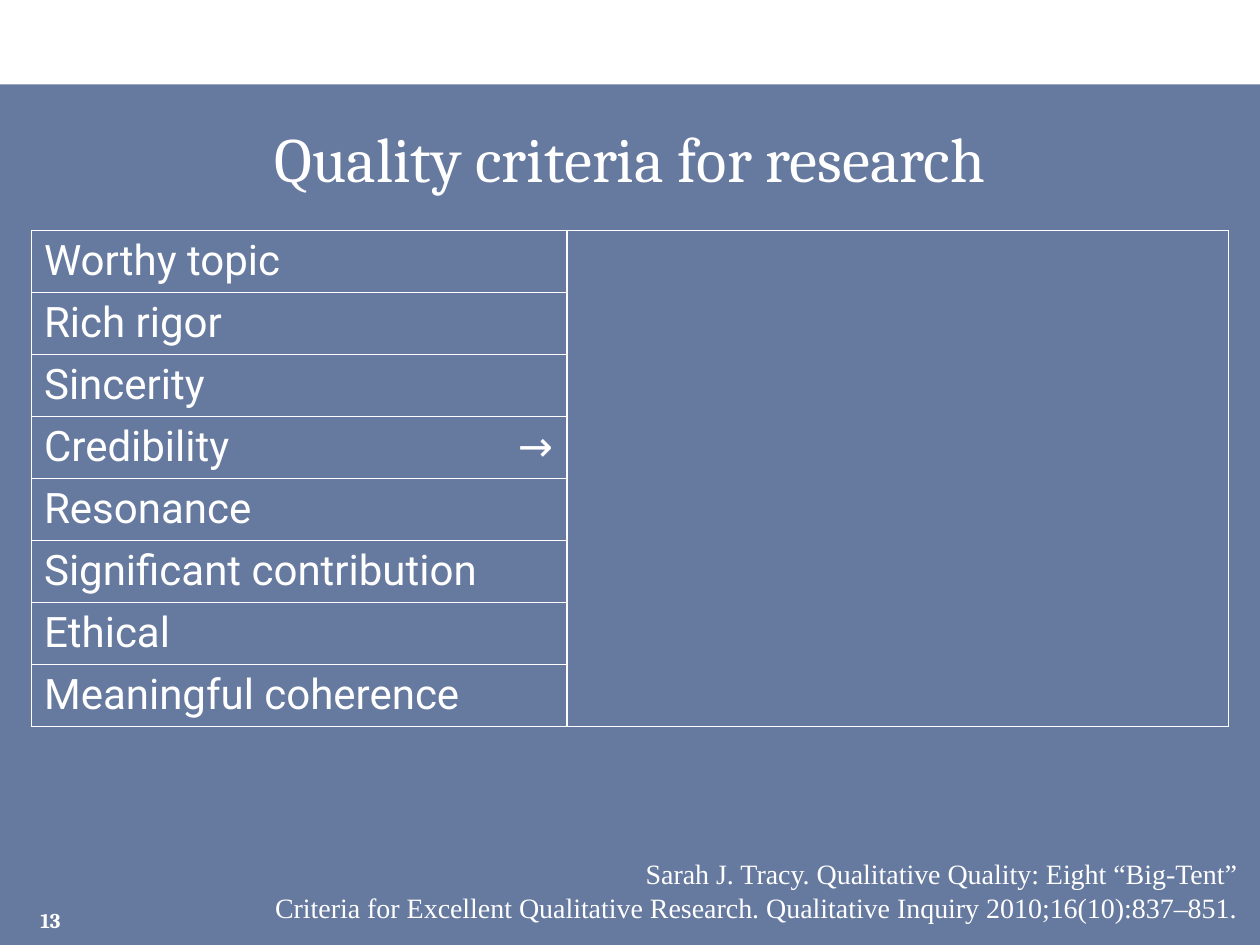
from lxml import etree
from pptx import Presentation
from pptx import util as u
from pptx.dml.color import RGBColor
from pptx.enum import shapes, text
from pptx.oxml import ns

WHITE = RGBColor(0xFF, 0xFF, 0xFF)
NAVY = RGBColor(0x00, 0x20, 0x60)
SERIF, SANS, TIMES = "Cambria", "Roboto", "Times New Roman"
LEFT, MID, RIGHT = text.PP_ALIGN.LEFT, text.PP_ALIGN.CENTER, text.PP_ALIGN.RIGHT

WIDE, HIGH = 10, 7.5
EDGE = WIDE / 40
BAND = 0.67
COLS = [3.75, 0.5, 5.25]
ROW = 0.49

TITLE = "Quality criteria for research"
ITEMS = [
    ("Worthy topic", ""),
    ("Rich rigor", ""),
    ("Sincerity", ""),
    ("Credibility", "→"),
    ("Resonance", ""),
    ("Significant contribution", ""),
    ("Ethical", ""),
    ("Meaningful coherence", ""),
]
CITE = [
    "Sarah J. Tracy. Qualitative Quality: Eight “Big-Tent”",
    "Criteria for Excellent Qualitative Research. Qualitative Inquiry 2010;16(10):837–851.",
]
PAGE = ["13"]


def write(frame, lines, face, size, align, bold=False):
    """Fill a text frame with one paragraph per line."""
    for i, line in enumerate(lines):
        para = frame.paragraphs[0] if i == 0 else frame.add_paragraph()
        para.alignment = align
        run = para.add_run()
        run.text = line
        font = run.font
        font.name, font.size, font.bold = face, u.Pt(size), bold
        font.color.rgb = WHITE


def note(slide, box, lines, face, size, anchor, bold=False):
    """Add a wrapped, right-aligned text box."""
    frame = slide.shapes.add_textbox(*map(u.Inches, box)).text_frame
    frame.word_wrap = True
    frame.vertical_anchor = anchor
    write(frame, lines, face, size, RIGHT, bold)


def rule(cell, sides):
    """Draw white borders on the given sides and clear the others."""
    props = cell._tc.get_or_add_tcPr()
    for side in "LRTB":
        line = etree.SubElement(props, ns.qn("a:ln" + side), w=str(u.Pt(1)))
        if side in sides:
            fill = etree.SubElement(line, ns.qn("a:solidFill"))
            etree.SubElement(fill, ns.qn("a:srgbClr"), val=str(WHITE))
        else:
            etree.SubElement(line, ns.qn("a:noFill"))
    cell.fill.background()


def panel(slide):
    """Add the translucent backdrop below the top band."""
    box = map(u.Inches, (0, BAND, WIDE, HIGH - BAND))
    back = slide.shapes.add_shape(shapes.MSO_SHAPE.RECTANGLE, *box)
    back.shadow.inherit = False
    back.line.fill.background()
    back.fill.solid()
    back.fill.fore_color.rgb = NAVY
    tint = back._element.spPr.find(".//" + ns.qn("a:srgbClr"))
    etree.SubElement(tint, ns.qn("a:alpha"), val="60000")
    tree = slide.shapes._spTree
    tree.remove(back._element)
    tree.insert(2, back._element)


def head(slide):
    """Place and format the title."""
    title = slide.shapes.title
    title.left, title.top = u.Inches(EDGE), u.Inches(HIGH / 9)
    title.width, title.height = u.Inches(WIDE - 2 * EDGE), u.Inches(HIGH / 9)
    title.text_frame.vertical_anchor = text.MSO_ANCHOR.MIDDLE
    write(title.text_frame, [TITLE], SERIF, 36, MID)


def grid(slide):
    """Add the criteria table with its merged right column."""
    count = len(ITEMS)
    box = map(u.Inches, (EDGE, 1.83, sum(COLS), ROW * count))
    table = slide.shapes.add_table(count, len(COLS), *box).table
    table.first_row = table.horz_banding = False
    for col, width in zip(table.columns, COLS):
        col.width = u.Inches(width)
    for i, (name, mark) in enumerate(ITEMS):
        table.rows[i].height = u.Inches(ROW)
        last = "LR" + ("B" if i == count - 1 else "")
        for j, sides in enumerate(("LTB", "RTB", last if i else "LRTB")):
            rule(table.cell(i, j), sides)
        write(table.cell(i, 0).text_frame, [name], SANS, 24, LEFT)
        if mark:
            write(table.cell(i, 1).text_frame, [mark], SANS, 24, MID)
    table.cell(0, 2).merge(table.cell(count - 1, 2))


def main():
    """Build the slide."""
    deck = Presentation()
    deck.slide_width, deck.slide_height = u.Inches(WIDE), u.Inches(HIGH)
    slide = deck.slides.add_slide(deck.slide_layouts[5])
    panel(slide)
    head(slide)
    grid(slide)
    note(slide, (1.3, 6.75, 8.62, 0.64), CITE, TIMES, 16, text.MSO_ANCHOR.TOP)
    note(slide, (0, 7.1, 0.58, 0.4), PAGE, SERIF, 12, text.MSO_ANCHOR.MIDDLE, True)
    deck.save("out.pptx")


if __name__ == "__main__":
    main()
